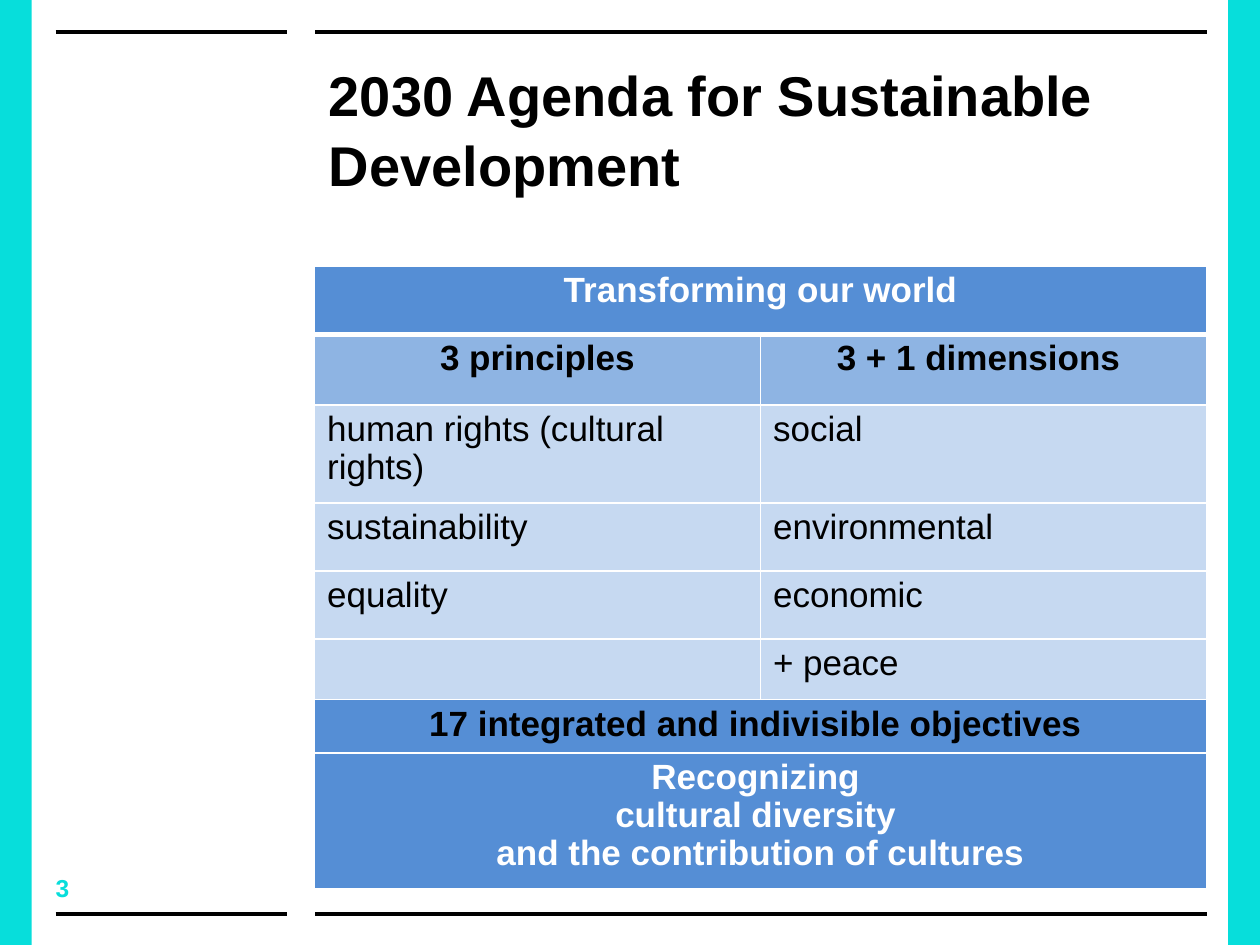
from lxml.etree import SubElement
from pptx import Presentation
from pptx.dml.color import RGBColor
from pptx.enum.shapes import MSO_CONNECTOR, MSO_SHAPE
from pptx.enum.text import PP_ALIGN
from pptx.oxml.ns import qn
from pptx.util import Cm, Pt

TURQUOISE = RGBColor(0x07, 0xDE, 0xDB)
BLACK = RGBColor(0x00, 0x00, 0x00)
WHITE = RGBColor(0xFF, 0xFF, 0xFF)
STRONG_BLUE = RGBColor(0x55, 0x8E, 0xD5)
MID_BLUE = RGBColor(0x8E, 0xB4, 0xE3)
PALE_BLUE = RGBColor(0xC6, 0xD9, 0xF1)

PAGE_WIDTH, PAGE_HEIGHT = 25.4, 19.05
BAR_WIDTH = 0.64


class AgendaPage:
    """Draws on one slide in a shared style; all lengths are in centimetres."""

    font_name = "Arial"

    def __init__(self, deck):
        self.shapes = deck.slides.add_slide(deck.slide_layouts[6]).shapes

    def style(self, para, size, color, bold=True, spacing=None):
        para.font.name = self.font_name
        para.font.size = Pt(size)
        para.font.bold = bold
        para.font.color.rgb = color
        para.line_spacing = spacing

    def bar(self, left):
        bar = self.shapes.add_shape(
            MSO_SHAPE.RECTANGLE, Cm(left), 0, Cm(BAR_WIDTH), Cm(PAGE_HEIGHT))
        bar.shadow.inherit = False
        bar.fill.solid()
        bar.fill.fore_color.rgb = TURQUOISE
        bar.line.fill.background()

    def rule(self, start, end, height):
        rule = self.shapes.add_connector(
            MSO_CONNECTOR.STRAIGHT, Cm(start), Cm(height), Cm(end), Cm(height))
        rule.line.color.rgb = BLACK
        rule.line.width = Pt(2)
        SubElement(rule._element.spPr, qn("a:effectLst"))

    def text(self, words, left, top, width, height, size, color, spacing=None):
        box = self.shapes.add_textbox(Cm(left), Cm(top), Cm(width), Cm(height))
        frame = box.text_frame
        frame.word_wrap = True
        frame.margin_left = frame.margin_right = 0
        frame.margin_top = frame.margin_bottom = 0
        frame.text = words
        self.style(frame.paragraphs[0], size, color, spacing=spacing)

    def borders(self, cell, top, bottom):
        properties = cell._tc.get_or_add_tcPr()
        for side, points in (("L", 1), ("R", 1), ("T", top), ("B", bottom)):
            line = SubElement(properties, qn(f"a:ln{side}"), w=str(Pt(points)))
            fill = SubElement(line, qn("a:solidFill"))
            SubElement(fill, qn("a:srgbClr"), val=str(WHITE))

    def table(self, rows, left, top, column_width):
        """Each row is (height, fill, text colour, bold, texts); one text spans the row."""
        table = self.shapes.add_table(
            len(rows), 2, Cm(left), Cm(top), Cm(2 * column_width),
            Cm(sum(row[0] for row in rows))).table
        for column in table.columns:
            column.width = Cm(column_width)
        for index, (height, fill, color, bold, texts) in enumerate(rows):
            table.rows[index].height = Cm(height)
            cells = list(table.rows[index].cells)
            for cell in cells:
                # A thicker line parts the heading from the body
                self.borders(cell, 3 if index == 1 else 1, 3 if index == 0 else 1)
                cell.fill.solid()
                cell.fill.fore_color.rgb = fill
            if len(texts) == 1:
                cells[0].merge(cells[1])
            for cell, words in zip(cells, texts):
                cell.text = words
                for para in cell.text_frame.paragraphs:
                    para.alignment = PP_ALIGN.CENTER if bold else PP_ALIGN.LEFT
                    self.style(para, 20, color, bold, 0.97)


ROWS = [
    (1.37, STRONG_BLUE, WHITE, True, ["Transforming our world"]),
    (1.42, MID_BLUE, BLACK, True, ["3 principles", "3 + 1 dimensions "]),
    (1.98, PALE_BLUE, BLACK, False, ["human rights (cultural rights)", "social"]),
    (1.37, PALE_BLUE, BLACK, False, ["sustainability", "environmental"]),
    (1.37, PALE_BLUE, BLACK, False, ["equality", "economic"]),
    (1.22, PALE_BLUE, BLACK, False, ["", "+ peace"]),
    (1.02, STRONG_BLUE, BLACK, True, ["17 integrated and indivisible objectives "]),
    (2.74, STRONG_BLUE, WHITE, True,
     ["Recognizing \ncultural diversity \nand the contribution of cultures"]),
]


def main():
    deck = Presentation()
    deck.slide_width, deck.slide_height = Cm(PAGE_WIDTH), Cm(PAGE_HEIGHT)
    page = AgendaPage(deck)

    # Frame: side bars and rules above and below
    for left in (0, PAGE_WIDTH - BAR_WIDTH):
        page.bar(left)
    for height in (0.64, 18.42):
        page.rule(1.12, 5.79, height)
        page.rule(6.35, 24.33, height)

    # Page number and title
    page.text("3", 1.12, 17.6, 2.9, 0.61, 14, TURQUOISE)
    page.text("2030 Agenda for Sustainable Development",
              6.63, 1.17, 18.01, 2.59, 32, BLACK, spacing=1.04)

    # Agenda table
    page.table(ROWS, 6.34, 5.37, 8.99)

    deck.save("out.pptx")


if __name__ == "__main__":
    main()
